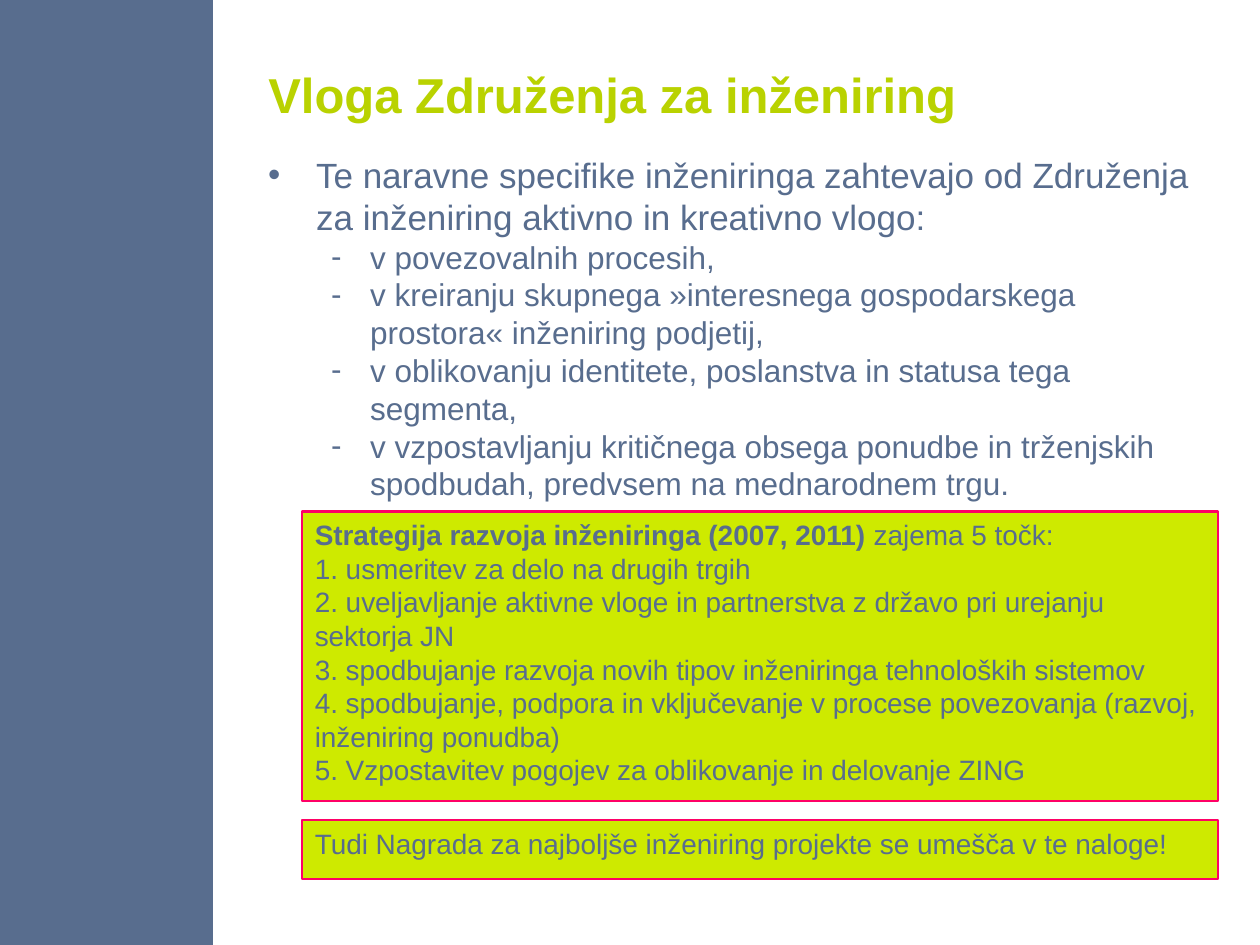
"""Build the slide on the role of the engineering association."""
from lxml import etree
from pptx import Presentation
from pptx.dml.color import RGBColor
from pptx.enum.shapes import MSO_SHAPE
from pptx.enum.text import MSO_ANCHOR, PP_ALIGN
from pptx.oxml.ns import qn
from pptx.util import Inches, Pt

RECT = MSO_SHAPE.RECTANGLE
TOP, MIDDLE = MSO_ANCHOR.TOP, MSO_ANCHOR.MIDDLE
LEFT = PP_ALIGN.LEFT
FONT = "Arial"
BLUE, GREEN, LIME, PINK = "586D8E", "B9D200", "CEEA00", "FF0066"

TITLE = "Vloga Združenja za inženiring"
BODY = [
    (0, "Te naravne specifike inženiringa zahtevajo od Združenja za inženiring aktivno in kreativno vlogo:"),
    (1, "v povezovalnih procesih,"),
    (1, "v kreiranju skupnega »interesnega gospodarskega prostora« inženiring podjetij,"),
    (1, "v oblikovanju identitete, poslanstva in statusa tega segmenta,"),
    (1, "v vzpostavljanju kritičnega obsega ponudbe in trženjskih spodbudah, predvsem na mednarodnem trgu."),
]
LEVELS = [("•", 0.38, 0.38, 20), ("-", 0.81, 0.31, 18)]
STRATEGY = [
    [("Strategija razvoja inženiringa (2007, 2011) ", True), ("zajema 5 točk:", False)],
    [("1. usmeritev za delo na drugih trgih", False)],
    [("2. uveljavljanje aktivne vloge in partnerstva z državo pri urejanju sektorja JN", False)],
    [("3. spodbujanje razvoja novih tipov inženiringa tehnoloških sistemov", False)],
    [("4. spodbujanje, podpora in vključevanje v procese povezovanja (razvoj, inženiring ponudba)", False)],
    [("5. Vzpostavitev pogojev za oblikovanje in delovanje ZING", False)],
]
AWARD = [[("Tudi Nagrada za najboljše inženiring projekte se umešča v te naloge!", False)]]
BOXES = [(4.06, 2.3, STRATEGY), (6.51, 0.47, AWARD)]


def rgb(color):
    """Return the colour for a hex string."""
    return RGBColor.from_string(color)


def add_run(p, text, size, color=BLUE, bold=False):
    """Append one formatted run to a paragraph."""
    r = p.add_run()
    r.text = text
    r.font.name, r.font.size, r.font.bold = FONT, Pt(size), bold
    r.font.color.rgb = rgb(color)


def add_paragraph(tf, index):
    """Return the paragraph at the index, left aligned and single spaced."""
    p = tf.add_paragraph() if index else tf.paragraphs[0]
    p.alignment, p.line_spacing = LEFT, 1.0
    p.space_before = p.space_after = Pt(0)
    return p


def add_bullet(p, char, margin, hang):
    """Give a paragraph a bullet with a hanging indent."""
    pPr = p._p.get_or_add_pPr()
    pPr.set("marL", str(Inches(margin)))
    pPr.set("indent", str(-Inches(hang)))
    etree.SubElement(pPr, qn("a:buFont"), typeface=FONT)
    etree.SubElement(pPr, qn("a:buChar"), char=char)


def add_rect(s, left, top, width, height, fill):
    """Add a flat filled rectangle without an outline."""
    sp = s.shapes.add_shape(RECT, Inches(left), Inches(top), Inches(width), Inches(height))
    sp.shadow.inherit = False
    sp.fill.solid()
    sp.fill.fore_color.rgb = rgb(fill)
    sp.line.fill.background()
    return sp


def add_title(s):
    """Place and format the title placeholder."""
    sp = s.shapes.title
    sp.left, sp.top, sp.width, sp.height = Inches(2.03), Inches(0.33), Inches(7.72), Inches(0.83)
    tf = sp.text_frame
    tf.vertical_anchor = MIDDLE
    p = tf.paragraphs[0]
    p.alignment = LEFT
    add_run(p, TITLE, 28, GREEN, True)


def add_body(s):
    """Add the bulleted text."""
    sp = s.shapes.add_textbox(Inches(2.03), Inches(1.17), Inches(7.72), Inches(5.75))
    tf = sp.text_frame
    tf.word_wrap = True
    for i, (level, text) in enumerate(BODY):
        char, margin, hang, size = LEVELS[level]
        p = add_paragraph(tf, i)
        p.level = level
        add_bullet(p, char, margin, hang)
        add_run(p, text, size)


def add_box(s, top, height, paragraphs):
    """Add an outlined box of text."""
    sp = add_rect(s, 2.4, top, 7.27, height, LIME)
    sp.line.color.rgb = rgb(PINK)
    sp.line.width = Pt(1.25)
    tf = sp.text_frame
    tf.word_wrap, tf.vertical_anchor = True, TOP
    for i, runs in enumerate(paragraphs):
        p = add_paragraph(tf, i)
        for text, bold in runs:
            add_run(p, text, 16, bold=bold)


def main():
    """Build and save the presentation."""
    prs = Presentation()
    prs.slide_width, prs.slide_height = Inches(10), Inches(7.5)
    s = prs.slides.add_slide(prs.slide_layouts[5])
    add_rect(s, 0, 0, 1.69, 7.5, BLUE)
    add_title(s)
    add_body(s)
    for box in BOXES:
        add_box(s, *box)
    prs.save("out.pptx")


if __name__ == "__main__":
    main()
